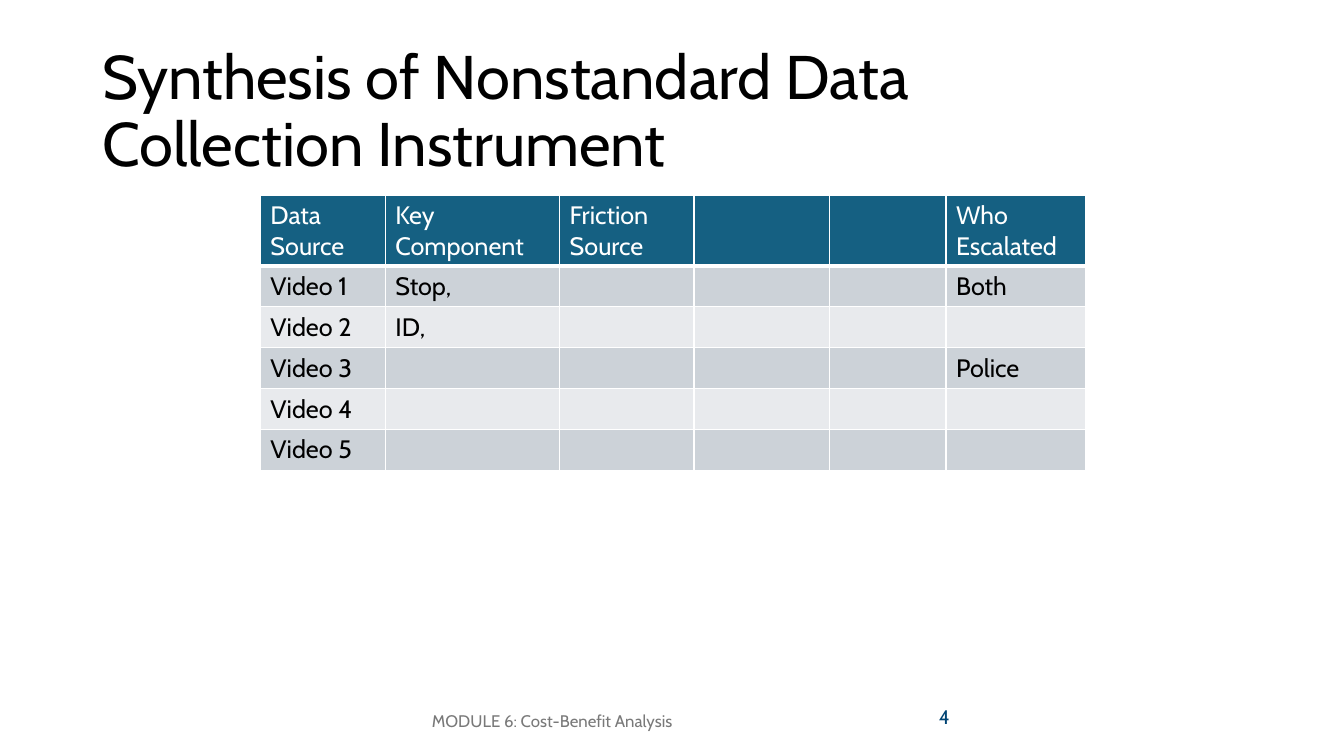
from dataclasses import dataclass
from typing import Any

import lxml.etree
import pptx
import pptx.dml.color
import pptx.enum.text
import pptx.oxml.ns
import pptx.util

RGBColor = pptx.dml.color.RGBColor
Align = pptx.enum.text.PP_ALIGN
Anchor = pptx.enum.text.MSO_ANCHOR

EMU_PER_PX = 9525
FONT = "Cabin"
BLACK = RGBColor(0x00, 0x00, 0x00)
WHITE = RGBColor(0xFF, 0xFF, 0xFF)
NAVY = RGBColor(0x00, 0x44, 0x74)
GREY = RGBColor(0x79, 0x79, 0x79)
HEADER_FILL = RGBColor(0x15, 0x60, 0x82)
BAND_FILLS = (RGBColor(0xCC, 0xD2, 0xD8), RGBColor(0xE8, 0xEA, 0xED))

TABLE_LEFT, TABLE_TOP = 248, 186
COLUMN_WIDTHS = (119, 166, 128, 129, 111, 133)
HEADER_HEIGHT, ROW_HEIGHT = 67, 39
ROWS = (
    ("Data Source", "Key Component", "Friction\nSource", "", "", "Who Escalated"),
    ("Video 1", "Stop,", "", "", "", "Both"),
    ("Video 2", "ID,", "", "", "", ""),
    ("Video 3", "", "", "", "", "Police"),
    ("Video 4", "", "", "", "", ""),
    ("Video 5", "", "", "", "", ""),
)


@dataclass(frozen=True)
class Label:
    text: str
    left: int
    top: int
    width: int
    height: int
    size: int
    color: RGBColor
    align: Align = Align.LEFT
    anchor: Anchor = Anchor.MIDDLE
    line_spacing: float = 1.0


LABELS = (
    Label("Synthesis of Nonstandard Data\vCollection Instrument",
          88, 38, 1104, 139, 44, BLACK, line_spacing=0.9),
    Label("4", 690, 667, 224, 38, 14, NAVY, Align.RIGHT, Anchor.TOP),
    Label("MODULE 6: Cost-Benefit Analysis",
          210, 667, 632, 38, 12, GREY, Align.CENTER),
)


def px(length: int) -> pptx.util.Emu:
    return pptx.util.Emu(length * EMU_PER_PX)


def format_runs(para: Any, size: int, color: RGBColor) -> None:
    values = {"name": FONT, "size": pptx.util.Pt(size), "bold": False}
    for span in para.runs:
        for name, value in values.items():
            setattr(span.font, name, value)
        span.font.color.rgb = color


def add_label(slide: Any, label: Label) -> None:
    box = slide.shapes.add_textbox(
        px(label.left), px(label.top), px(label.width), px(label.height))
    frame = box.text_frame
    frame.word_wrap = True
    frame.vertical_anchor = label.anchor
    frame.text = label.text
    para = frame.paragraphs[0]
    values = {"alignment": label.align, "line_spacing": label.line_spacing}
    for name, value in values.items():
        setattr(para, name, value)
    format_runs(para, label.size, label.color)


def add_borders(cell: Any, widths: dict[str, int]) -> None:
    """Draw white borders, with widths in points keyed by side tag."""
    properties = cell._tc.get_or_add_tcPr()
    qn = pptx.oxml.ns.qn
    for index, (side, width) in enumerate(widths.items()):
        line = lxml.etree.Element(qn(f"a:{side}"), w=str(pptx.util.Pt(width)))
        fill = lxml.etree.SubElement(line, qn("a:solidFill"))
        lxml.etree.SubElement(fill, qn("a:srgbClr"), val=str(WHITE))
        properties.insert(index, line)


def add_data_table(slide: Any) -> None:
    heights = [HEADER_HEIGHT] + [ROW_HEIGHT] * (len(ROWS) - 1)
    table = slide.shapes.add_table(
        len(ROWS), len(COLUMN_WIDTHS), px(TABLE_LEFT), px(TABLE_TOP),
        px(sum(COLUMN_WIDTHS)), px(sum(heights))).table
    for column, width in zip(table.columns, COLUMN_WIDTHS):
        column.width = px(width)
    for row_index, texts in enumerate(ROWS):
        is_header = row_index == 0
        table.rows[row_index].height = px(heights[row_index])
        fill = HEADER_FILL if is_header else BAND_FILLS[(row_index - 1) % 2]
        widths = {"lnL": 1, "lnR": 1,
                  "lnT": 3 if row_index == 1 else 1,
                  "lnB": 3 if is_header else 1}
        for cell, text in zip(table.rows[row_index].cells, texts):
            cell.fill.solid()
            cell.fill.fore_color.rgb = fill
            add_borders(cell, widths)
            if text:
                cell.text_frame.text = text
                for para in cell.text_frame.paragraphs:
                    format_runs(para, 18, WHITE if is_header else BLACK)


def main() -> None:
    deck = pptx.Presentation()
    deck.slide_width, deck.slide_height = px(1280), px(720)
    page = deck.slides.add_slide(deck.slide_layouts[6])
    for label in LABELS:
        add_label(page, label)
    add_data_table(page)
    deck.save("out.pptx")


if __name__ == "__main__":
    main()
